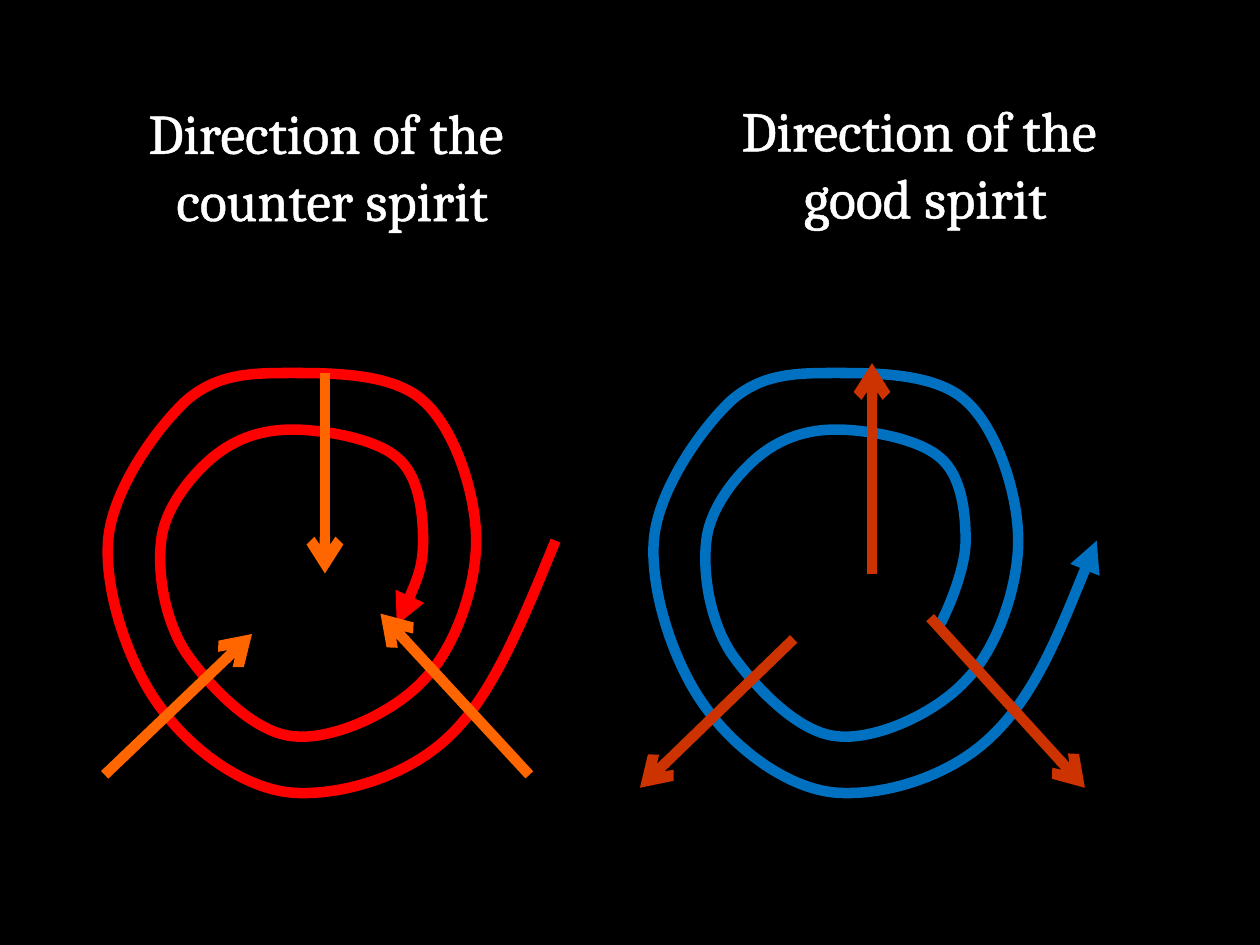
from lxml import etree
from pptx import Presentation
from pptx.dml.color import RGBColor
from pptx.enum.shapes import MSO_CONNECTOR as LINK
from pptx.enum.text import MSO_ANCHOR as ANCHOR, PP_ALIGN as ALIGN
from pptx.oxml.ns import qn
from pptx.util import Cm, Pt

BLACK = RGBColor(0x00, 0x00, 0x00)
WHITE = RGBColor(0xFF, 0xFF, 0xFF)
RED = RGBColor(0xFF, 0x00, 0x00)
BLUE = RGBColor(0x00, 0x70, 0xC0)
ORANGE = RGBColor(0xFF, 0x66, 0x00)
RUST = RGBColor(0xCC, 0x33, 0x00)

# Spiral from its outer to its inner end, in cm from its left and top
START = (9.02, 3.38)
CURVES = [
    [(8.38, 4.93), (7.77, 6.48), (6.88, 7.32)],
    [(6.02, 8.15), (4.67, 8.53), (3.71, 8.46)],
    [(2.74, 8.38), (1.68, 7.6), (1.07, 6.76)],
    [(0.43, 5.92), (-0.08, 4.42), (0, 3.38)],
    [(0.08, 2.36), (0.97, 1.12), (1.57, 0.56)],
    [(2.21, 0), (2.92, 0), (3.71, 0)],
    [(4.5, 0), (5.74, 0), (6.35, 0.56)],
    [(6.99, 1.12), (7.42, 2.44), (7.42, 3.38)],
    [(7.42, 4.32), (6.99, 5.56), (6.35, 6.2)],
    [(5.74, 6.86), (4.5, 7.42), (3.71, 7.32)],
    [(2.92, 7.24), (2.03, 6.3), (1.57, 5.64)],
    [(1.14, 4.98), (0.99, 4.04), (1.07, 3.38)],
    [(1.14, 2.72), (1.68, 2.06), (2.11, 1.7)],
    [(2.57, 1.32), (3.1, 1.14), (3.71, 1.14)],
    [(4.34, 1.14), (5.38, 1.32), (5.82, 1.7)],
    [(6.27, 2.06), (6.35, 2.82), (6.35, 3.38)],
    [(6.35, 3.94), (5.99, 4.78), (5.82, 5.08)],
]
TOP = 7.52

# Title lines and box, spiral left, x scale, colour and tip end, arrow colour and ends
SIDES = [
    (("Direction of the ", "good spirit"), (12.7, 1.78, 11.91, 3),
     13.18, 0.99, BLUE, "headEnd", RUST,
     [(18.75, 12.45, 21.87, 15.88), (16, 12.88, 12.9, 15.88),
      (17.58, 11.58, 17.58, 7.32)]),
    (("Direction of the ", "counter spirit"), (1.3, 1.83, 10.8, 3),
     2.18, 1, RED, "tailEnd", ORANGE,
     [(10.67, 15.62, 7.67, 12.37), (2.11, 15.62, 5.08, 12.78),
      (6.55, 7.52, 6.55, 11.56)]),
]


def stroke(shape, color, end, kind):
    """Give the shape a thick line with an arrowhead at one end."""
    shape.line.color.rgb = color
    shape.line.width = Pt(6)
    etree.SubElement(shape.line._get_or_add_ln(), qn("a:" + end), type=kind)


def bend(shape):
    """Turn each three straight segments of the outline into one Bézier curve."""
    path = shape._element.find(".//" + qn("a:path"))
    steps = path.findall(qn("a:lnTo"))
    for i in range(0, len(steps), 3):
        curve = etree.SubElement(path, qn("a:cubicBezTo"))
        for step in steps[i:i + 3]:
            curve.append(step[0])
            path.remove(step)


deck = Presentation()
deck.slide_width, deck.slide_height = Cm(25.4), Cm(19.05)
slide = deck.slides.add_slide(deck.slide_layouts[6])
back = slide.background.fill
back.solid()
back.fore_color.rgb = BLACK

for lines, box, left, ratio, color, end, tint, arrows in SIDES:
    title = slide.shapes.add_textbox(*map(Cm, box))
    frame = title.text_frame
    frame.word_wrap = True
    frame.vertical_anchor = ANCHOR.MIDDLE
    frame.text = "\n".join(lines)
    for para in frame.paragraphs:
        para.alignment = ALIGN.CENTER
        font = para.runs[0].font
        font.name = "Cambria"
        font.size = Pt(32)
        edge = etree.Element(qn("a:ln"), w=str(Pt(0.75)))
        solid = etree.SubElement(edge, qn("a:solidFill"))
        etree.SubElement(solid, qn("a:srgbClr"), val=str(WHITE))
        font.fill.solid()
        font.fill.fore_color.rgb = WHITE
        para.runs[0]._r.rPr.insert(0, edge)

    first, *rest = [(Cm(left + x * ratio), Cm(TOP + y))
                    for x, y in [START] + sum(CURVES, [])]
    pen = slide.shapes.build_freeform(*first)
    pen.add_line_segments(rest, close=False)
    spiral = pen.convert_to_shape()
    bend(spiral)
    spiral.shadow.inherit = False
    spiral.fill.background()
    stroke(spiral, color, end, "triangle")

    group = slide.shapes.add_group_shape()
    for ends in arrows:
        arrow = group.shapes.add_connector(LINK.STRAIGHT, *map(Cm, ends))
        stroke(arrow, tint, "tailEnd", "arrow")
        etree.SubElement(arrow._element.spPr, qn("a:effectLst"))

deck.save("out.pptx")
